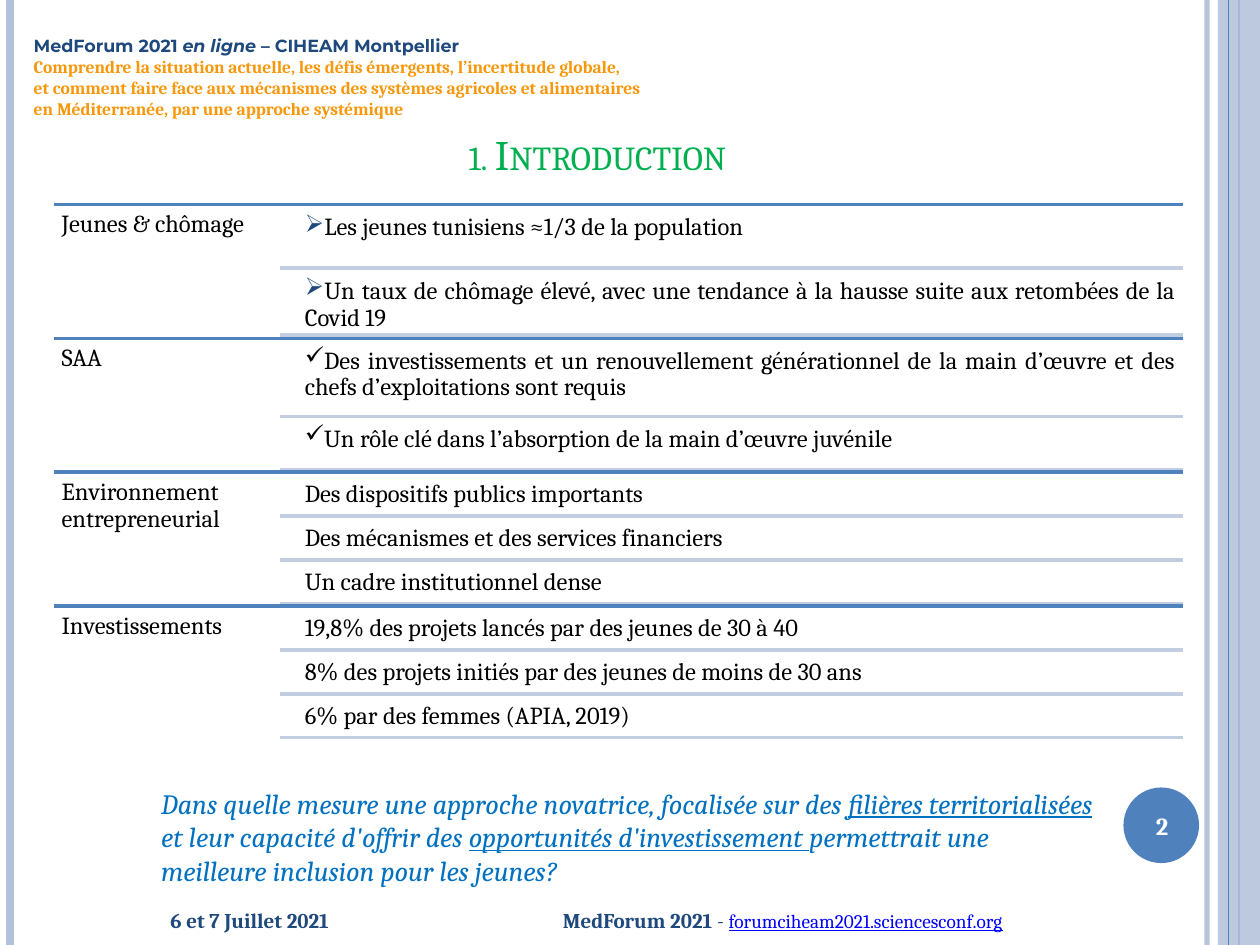
from dataclasses import dataclass, replace
from typing import Optional

from lxml import etree
from pptx import Presentation
from pptx import util as u
from pptx.dml.color import RGBColor
from pptx.enum import shapes, text
from pptx.oxml import ns

Pt = u.Pt


@dataclass(frozen=True)
class Theme:
    blue: str = "4F81BD"
    pale: str = "B3C1DB"
    rule: str = "C2CDE1"
    navy: str = "1F497D"
    orange: str = "F79709"
    green: str = "00B050"
    azure: str = "0070C0"
    link: str = "0000FF"
    black: str = "000000"
    white: str = "FFFFFF"
    serif: str = "Cambria"
    sans: str = "Montserrat"
    head: int = 10
    url: int = 11
    foot: int = 12
    body: int = 14
    ask: int = 16
    title: int = 24


T = Theme()


@dataclass(frozen=True)
class Style:
    size: int
    color: str
    font: str = T.serif
    bold: bool = False
    ital: bool = False
    under: bool = False


@dataclass(frozen=True)
class Box:
    x: float
    y: float
    w: float
    h: float


@dataclass(frozen=True)
class Row:
    words: str
    high: float = 23.8


@dataclass(frozen=True)
class Group:
    name: str
    rows: tuple[Row, ...]
    mark: str = ""
    tint: str = T.black


def rgb(hue: str) -> RGBColor:
    return RGBColor.from_string(hue)


def fade(fill, pct: int) -> None:
    """Make a solid fill partly transparent."""
    hue = fill._xPr.find(".//" + ns.qn("a:srgbClr"))
    etree.SubElement(hue, ns.qn("a:alpha")).set("val", str(pct * 1000))


def add_line(page, x1: float, y1: float, x2: float, y2: float,
             hue: str, wide: float):
    line = page.shapes.add_connector(
        shapes.MSO_CONNECTOR.STRAIGHT, Pt(x1), Pt(y1), Pt(x2), Pt(y2))
    line.line.color.rgb = rgb(hue)
    line.line.width = Pt(wide)
    etree.SubElement(line._element.spPr, ns.qn("a:effectLst"))
    return line


def add_shape(page, kind, box: Box, hue: str):
    item = page.shapes.add_shape(
        kind, Pt(box.x), Pt(box.y), Pt(box.w), Pt(box.h))
    item.shadow.inherit = False
    item.fill.solid()
    item.fill.fore_color.rgb = rgb(hue)
    item.line.fill.background()
    return item


def add_run(para, words: str, style: Style):
    run = para.add_run()
    run.text = words
    font = run.font
    font.name, font.size = style.font, Pt(style.size)
    font.bold, font.italic = style.bold, style.ital
    font.underline = style.under
    font.color.rgb = rgb(style.color)
    return run


def add_text(page, box: Box, runs: list[tuple[str, Style]],
             align=text.PP_ALIGN.LEFT, anchor=text.MSO_ANCHOR.TOP,
             inset: Optional[float] = None):
    frame = page.shapes.add_textbox(
        Pt(box.x), Pt(box.y), Pt(box.w), Pt(box.h)).text_frame
    frame.word_wrap = True
    frame.vertical_anchor = anchor
    if inset is not None:
        frame.margin_left = frame.margin_right = Pt(inset)
        frame.margin_top = frame.margin_bottom = Pt(inset)
    para = frame.paragraphs[0]
    para.alignment = align
    for words, style in runs:
        add_run(para, words, style)
    return frame


def add_mark(para, mark: str, hue: str) -> None:
    """Bullet set tight against the text."""
    prop = para._p.get_or_add_pPr()
    prop.set("marL", "0")
    prop.set("indent", "0")
    tint = etree.SubElement(prop, ns.qn("a:buClr"))
    etree.SubElement(tint, ns.qn("a:srgbClr")).set("val", hue)
    etree.SubElement(prop, ns.qn("a:buChar")).set("char", mark)


def add_group(page, group: Group, top: float, step: float) -> None:
    left, mid, right = 31, 160, 676
    style = Style(T.body, T.black)
    add_line(page, left, top, right, top, T.blue, 2)
    name = add_text(page, Box(left, top, mid - left, step),
                    [(group.name, style)], inset=4.2)
    name.paragraphs[0].line_spacing = 0.9
    gap = (step - sum(row.high for row in group.rows)) / (len(group.rows) + 1)
    y = top + gap
    for row in group.rows:
        cell = add_text(page, Box(170, y, right - 170, row.high),
                        [(row.words, style)], text.PP_ALIGN.JUSTIFY, inset=4.2)
        para = cell.paragraphs[0]
        para.line_spacing = 0.9
        if group.mark:
            add_mark(para, group.mark, group.tint)
        y += row.high
        add_line(page, mid, y, right, y, T.rule, 2)
        y += gap


GROUPS = (
    Group("Jeunes & chômage", (
        Row("Les jeunes tunisiens ≈1/3 de la population", 34.6),
        Row("Un taux de chômage élevé, avec une tendance à la hausse "
            "suite aux retombées de la Covid 19", 36.7)), "➢", T.navy),
    Group("SAA", (
        Row("Des investissements et un renouvellement générationnel de la "
            "main d’œuvre et des chefs d’exploitations sont requis", 43.2),
        Row("Un rôle clé dans l’absorption de la main d’œuvre juvénile",
            28.8)), "✓"),
    Group("Environnement entrepreneurial", (
        Row("Des dispositifs publics importants"),
        Row("Des mécanismes et des services financiers"),
        Row("Un cadre institutionnel dense"))),
    Group("Investissements", (
        Row("19,8% des projets lancés par des jeunes de 30 à 40"),
        Row("8% des projets initiés par des jeunes de moins de 30 ans"),
        Row("6% par des femmes (APIA, 2019)"))),
)


def add_frame(page) -> None:
    # Side bars; the translucent band covers the line it is joined to
    edge = add_line(page, 689.8, 0, 689.8, 540, T.pale, 3)
    fade(edge.line.fill, 93)
    add_line(page, 5.8, 0, 5.8, 540, T.pale, 4.5)
    band = add_shape(page, shapes.MSO_SHAPE.RECTANGLE,
                     Box(696, 0, 24, 540), T.pale)
    fade(band.fill, 87)
    axis = add_line(page, 708, 0, 708, 540, T.blue, 1.5)
    axis.begin_connect(band, 0)
    axis.end_connect(band, 2)
    page.shapes._spTree.append(band._element)
    add_line(page, 702, 0, 702, 540, T.blue, 0.75)
    add_shape(page, shapes.MSO_SHAPE.OVAL, Box(642, 450, 43.2, 43.2), T.blue)

    # Footer and page number
    mid = text.MSO_ANCHOR.MIDDLE
    foot = Style(T.foot, T.navy, bold=True)
    add_text(page, Box(36.7, 510.5, 158.4, 30.2),
             [("6 et 7 Juillet 2021", foot)], text.PP_ALIGN.RIGHT, mid)
    add_text(page, Box(314.6, 511.2, 370.8, 28.8), [
        ("MedForum 2021 ", foot), ("- ", replace(foot, bold=False)),
        ("forumciheam2021.sciencesconf.org",
         Style(T.url, T.link, under=True))], anchor=mid)
    add_text(page, Box(640, 451.4, 48.2, 41),
             [("2", Style(T.body, T.white, bold=True))],
             text.PP_ALIGN.CENTER, mid)

    # Event heading
    head = Style(T.head, T.navy, T.sans, bold=True)
    event = add_text(page, Box(12.2, 16.6, 432.7, 55.4), [
        ("MedForum 2021 ", head), ("en ligne ", replace(head, ital=True)),
        ("– CIHEAM Montpellier", head)])
    para = event.add_paragraph()
    theme = (
        "Comprendre la situation actuelle, les défis émergents, "
        "l’incertitude globale,",
        "et comment faire face aux mécanismes des systèmes agricoles "
        "et alimentaires",
        "en Méditerranée, par une approche systémique")
    for num, words in enumerate(theme):
        if num:
            para.add_line_break()
        add_run(para, words, Style(T.head, T.orange, bold=True))


def main() -> None:
    deck = Presentation()
    deck.slide_width, deck.slide_height = Pt(720), Pt(540)
    page = deck.slides.add_slide(deck.slide_layouts[5])
    add_frame(page)

    # Title
    title = page.shapes.title
    title.left, title.top = Pt(0), Pt(54.7)
    title.width, title.height = Pt(687), Pt(51.1)
    frame = title.text_frame
    frame.auto_size = text.MSO_AUTO_SIZE.NONE
    frame.vertical_anchor = text.MSO_ANCHOR.BOTTOM
    frame.paragraphs[0].alignment = text.PP_ALIGN.CENTER
    run = add_run(frame.paragraphs[0], "1. Introduction ",
                  Style(T.title, T.green))
    run.font._element.set("cap", "small")

    # Ruled list of themes
    step = 76.5
    for num, group in enumerate(GROUPS):
        add_group(page, group, 116.8 + num * step, step)

    # Closing question
    ask = Style(T.ask, T.azure, ital=True)
    key = replace(ask, under=True)
    add_text(page, Box(85, 445.7, 548.6, 67.7), [
        ("Dans quelle mesure une approche novatrice, focalisée sur des ", ask),
        ("filières territorialisées ", key),
        ("et leur capacité d'offrir des ", ask),
        ("opportunités d'investissement ", key),
        ("permettrait une meilleure inclusion pour les jeunes?", ask)])

    deck.save("out.pptx")


if __name__ == "__main__":
    main()
